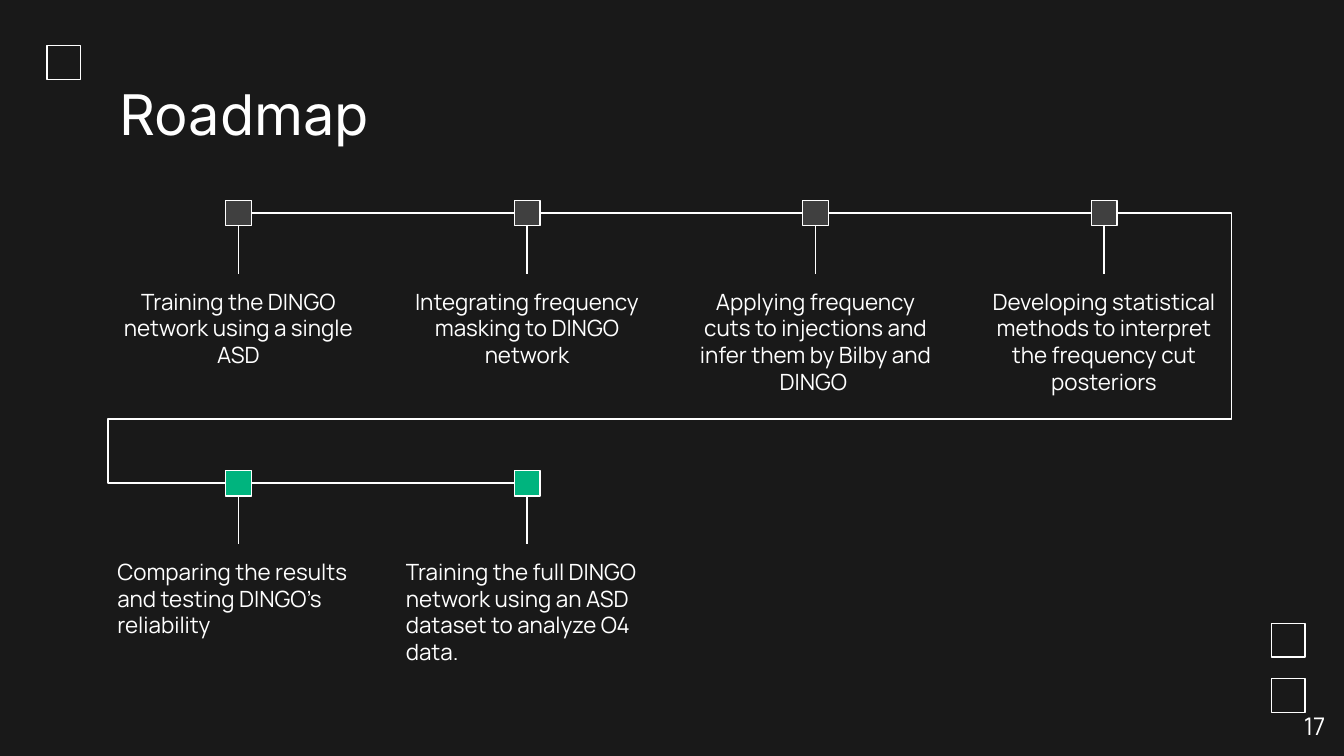
from lxml.etree import SubElement
from pptx import Presentation
from pptx.dml.color import RGBColor
from pptx.enum.shapes import MSO_CONNECTOR, MSO_SHAPE
from pptx.enum.text import MSO_ANCHOR, PP_ALIGN
from pptx.oxml.ns import qn
from pptx.util import Inches, Pt

COLORS = {"background": "191919", "white": "FFFFFF", "done": "404040", "next": "00B47E"}
MARKER = 0.19
TEXT_WIDTH = 2
FIRST_LEFT, LAST_LEFT = 1.68, 8.12
STEP = (LAST_LEFT - FIRST_LEFT) / 3

# marker top, text height, marker color, alignment, milestones
ROWS = [
    (1.49, 1.01, "done", PP_ALIGN.CENTER, [
        "Training the DINGO network using a single ASD",
        "Integrating frequency masking to DINGO network",
        "Applying frequency cuts to injections and infer them by Bilby and DINGO ",
        "Developing statistical methods to interpret the frequency cut posteriors",
    ]),
    (3.5, 1.39, "next", PP_ALIGN.LEFT, [
        "Comparing the results and testing DINGO’s reliability",
        "Training the full DINGO network using an ASD dataset to analyze O4 data.",
    ]),
]

prs = Presentation()
prs.slide_width, prs.slide_height = Inches(10), Inches(10 * 9 / 16)
s = prs.slides.add_slide(prs.slide_layouts[5])
s.background.fill.solid()
s.background.fill.fore_color.rgb = RGBColor.from_string(COLORS["background"])


def write(sp, text, size, font, align):
    tf = sp.text_frame
    tf.word_wrap = True
    tf.vertical_anchor = MSO_ANCHOR.TOP
    tf.margin_left = tf.margin_right = tf.margin_top = tf.margin_bottom = Inches(0.1)
    p = tf.paragraphs[0]
    p.text = text
    p.alignment = align
    p.font.size = Pt(size)
    p.font.name = font
    p.font.color.rgb = RGBColor.from_string(COLORS["white"])


def outline(sp):
    """Give a shape or connector a thin white line and no shadow."""
    sp.line.color.rgb = RGBColor.from_string(COLORS["white"])
    sp.line.width = Pt(0.75)
    if hasattr(sp, "shadow"):
        sp.shadow.inherit = False
    else:
        SubElement(sp._element.spPr, qn("a:effectLst"))


# Corner squares
for x, y in [(9.46, 4.64), (9.46, 5.05), (0.35, 0.34)]:
    sp = s.shapes.add_shape(MSO_SHAPE.RECTANGLE, Inches(x), Inches(y), Inches(0.25), Inches(0.25))
    sp.fill.background()
    outline(sp)

title = s.shapes.title
title.left, title.top = Inches(0.79), Inches(0.49)
title.width, title.height = Inches(8.43), Inches(0.71)
write(title, "Roadmap", 30, "Inter", PP_ALIGN.LEFT)

# Milestones
for top, text_height, color, align, milestones in ROWS:
    previous = None
    for i, text in enumerate(milestones):
        left = FIRST_LEFT + i * STEP
        marker = s.shapes.add_shape(
            MSO_SHAPE.RECTANGLE, Inches(left), Inches(top), Inches(MARKER), Inches(MARKER))
        marker.fill.solid()
        marker.fill.fore_color.rgb = RGBColor.from_string(COLORS[color])
        outline(marker)

        label = s.shapes.add_textbox(
            Inches(left + (MARKER - TEXT_WIDTH) / 2), Inches(top + 0.55),
            Inches(TEXT_WIDTH), Inches(text_height))
        write(label, text, 12, "Manrope", align)

        joins = [(marker, 2, label, 0)]
        if previous is not None:
            joins.append((previous, 3, marker, 1))
        for start, start_side, end, end_side in joins:
            line = s.shapes.add_connector(MSO_CONNECTOR.STRAIGHT, 0, 0, 0, 0)
            line.begin_connect(start, start_side)
            line.end_connect(end, end_side)
            outline(line)
        previous = marker

# Bent line from the end of the first row to the start of the second
bend = s.shapes.add_connector(
    MSO_CONNECTOR.ELBOW, Inches(LAST_LEFT + MARKER), Inches(ROWS[0][0] + MARKER / 2),
    Inches(FIRST_LEFT), Inches(ROWS[1][0] + MARKER / 2))
outline(bend)
geometry = bend._element.spPr.find(qn("a:prstGeom"))
geometry.set("prst", "bentConnector5")
guides = geometry.find(qn("a:avLst"))
for name, value in [("adj1", -12900), ("adj2", 76200), ("adj3", 113200)]:
    SubElement(guides, qn("a:gd"), name=name, fmla=f"val {value}")

number = s.shapes.add_textbox(Inches(9.36), Inches(5.19), Inches(0.6), Inches(0.43))
write(number, "17", 13, "Manrope", PP_ALIGN.RIGHT)

prs.save("out.pptx")
